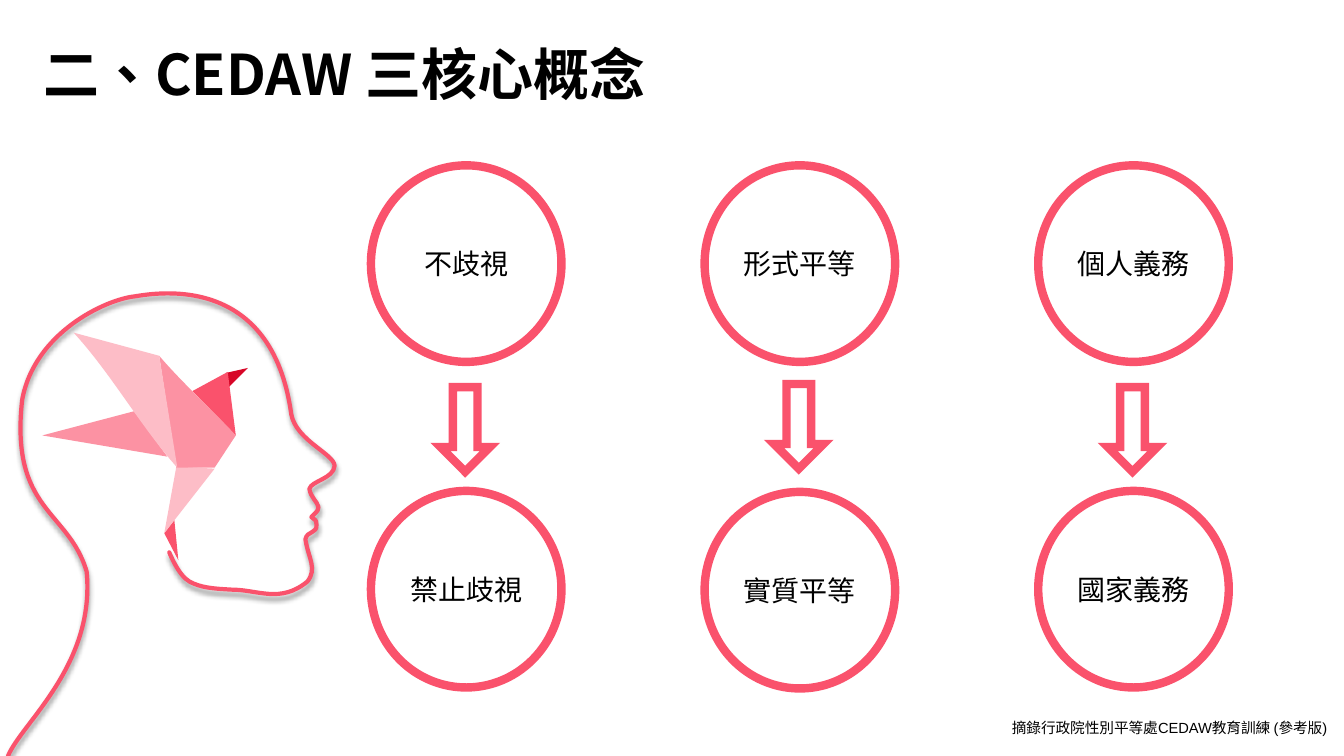
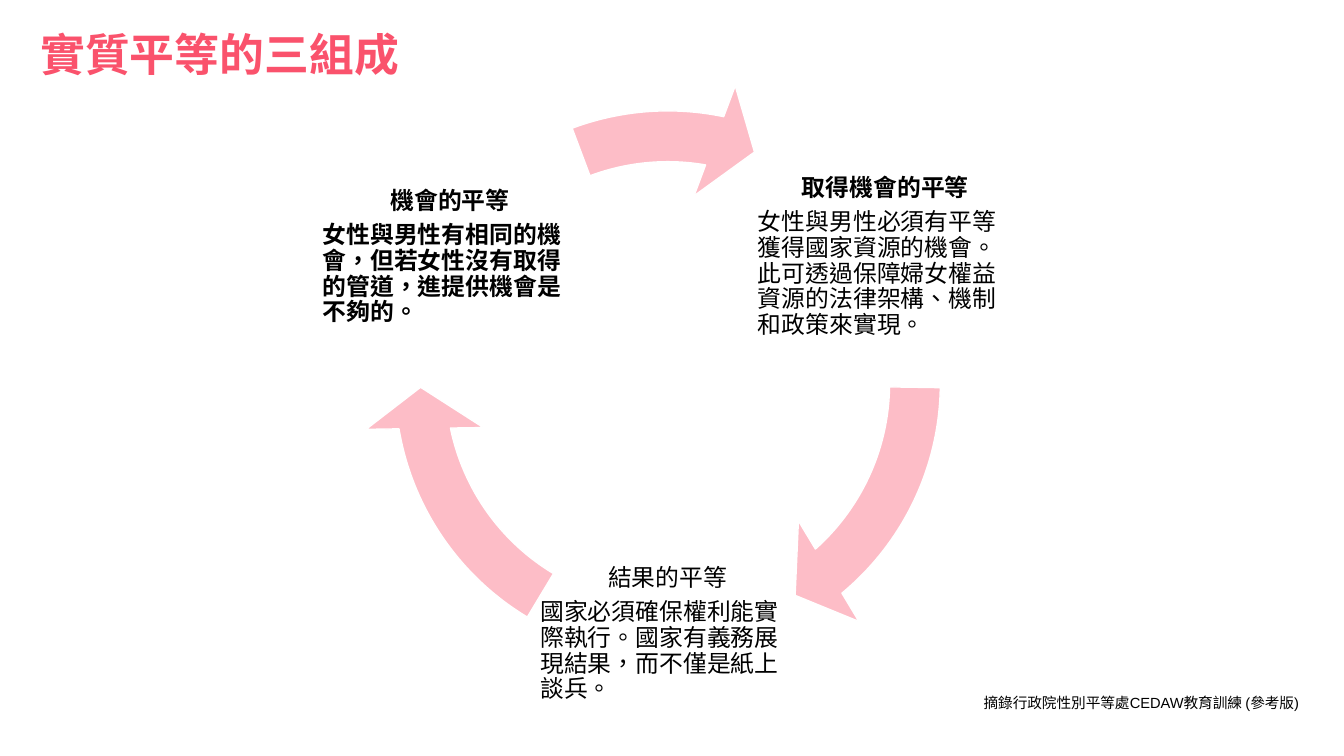
from dataclasses import dataclass

from lxml.etree import SubElement
from pptx import Presentation
from pptx.dml.color import RGBColor
from pptx.enum.shapes import MSO_SHAPE
from pptx.enum.text import MSO_ANCHOR, MSO_AUTO_SIZE, PP_ALIGN
from pptx.oxml.ns import qn
from pptx.util import Inches, Pt


@dataclass(frozen=True)
class Theme:
    ink: str = "000000"
    paper: str = "FFFFFF"
    rose: str = "FA526C"
    blush: str = "FC92A3"
    pale: str = "FDBDC7"
    crimson: str = "D70627"
    sans: str = "Noto Sans CJK SC"
    cycle: str = "Noto Sans CJK JP"
    latin: str = "Arial"
    head: float = 40
    title: float = 32
    label: float = 20
    body: float = 17
    note: float = 10.5


look = Theme()


def write(frame, lines, size, face=look.sans, color=look.ink, inset=0.0, **form):
    """Fill a frame with (text, bold, alignment) lines; form sets paragraph values."""
    layout = {"word_wrap": True, "auto_size": MSO_AUTO_SIZE.NONE,
              "vertical_anchor": MSO_ANCHOR.MIDDLE}
    layout |= {f"margin_{side}": Inches(inset)
               for side in ("left", "top", "right", "bottom")}
    for key, value in layout.items():
        setattr(frame, key, value)
    for i, (text, bold, align) in enumerate(lines):
        para = frame.add_paragraph() if i else frame.paragraphs[0]
        for key, value in {"alignment": align, **form}.items():
            setattr(para, key, value)
        run = para.add_run()
        run.text = text
        for key, value in {"name": face, "size": Pt(size), "bold": bold}.items():
            setattr(run.font, key, value)
        run.font.color.rgb = RGBColor.from_string(color)
        east = look.sans if face == look.latin else face
        props = run._r.get_or_add_rPr()
        props.set("lang", "zh-TW")
        SubElement(props, qn("a:ea"), typeface=east)


def paint(shape, fill=None, line=None, width=1):
    shape.shadow.inherit = False
    if fill:
        shape.fill.solid()
        shape.fill.fore_color.rgb = RGBColor.from_string(fill)
    else:
        shape.fill.background()
    if line:
        shape.line.color.rgb = RGBColor.from_string(line)
        shape.line.width = Pt(width)
    else:
        shape.line.fill.background()


deck = Presentation()
deck.slide_width, deck.slide_height = Inches(40) // 3, Inches(7.5)
left, mid = PP_ALIGN.LEFT, PP_ALIGN.CENTER

# Titles and source notes
pages = [
    ("二、CEDAW 三核心概念", look.head, look.ink, (0.33, 0.2, 6.64, 1.13), (9.94, 7.08)),
    ("實質平等的三組成", look.title, look.rose, (0.3, 0, 3.77, 1.13), (9.66, 6.83)),
]
slides = []
for words, size, color, box, spot in pages:
    slide = deck.slides.add_slide(deck.slide_layouts[5])
    title = slide.shapes.title
    for key, value in zip(("left", "top", "width", "height"), box):
        setattr(title, key, Inches(value))
    write(title.text_frame, [(words, True, left)], size, color=color,
          inset=0.1, line_spacing=0.9)
    note = slide.shapes.add_textbox(*map(Inches, (*spot, 3.39, 0.28))).text_frame
    write(note, [("摘錄行政院性別平等處CEDAW教育訓練 (參考版)", False, left)],
          look.note, look.latin, inset=0.1)
    note.margin_top = note.margin_bottom = Inches(0.05)
    note.vertical_anchor = MSO_ANCHOR.TOP
    slides.append(slide)
core, ring = slides

# Three columns: circle, arrow, circle
pairs = [("不歧視", "禁止歧視"), ("形式平等", "實質平等"), ("個人義務", "國家義務")]
start, step, wide, high = 3.68, 3.31, 1.89, 1.95
for col, pair in enumerate(pairs):
    x = start + col * step
    low, gap = (4.88, 3.81) if col == 1 else (4.87, 3.84)
    for y, words in zip((1.64, low), pair):
        disc = core.shapes.add_shape(
            MSO_SHAPE.OVAL, *map(Inches, (x, y, wide, high)))
        paint(disc, look.paper, look.rose, 6)
        write(disc.text_frame, [(words, False, mid)], look.label)
    arrow = core.shapes.add_shape(
        MSO_SHAPE.DOWN_ARROW, *map(Inches, (x + 0.69, gap, 0.49, 0.84)))
    paint(arrow, look.paper, look.rose, 6)
    SubElement(arrow.line._get_or_add_ln(), qn("a:miter"), lim="800000")

# Outlines: a pair is a corner, six numbers are two curve handles and an end
face = [
    (1.68, 5.48),
    (1.68, 5.48, 1.77, 5.71, 1.88, 5.77), (1.99, 5.83, 2.11, 5.84, 2.3, 5.85),
    (2.56, 5.85, 2.78, 5.99, 3.05, 5.77), (3.15, 5.64, 3.06, 5.54, 3.03, 5.35),
    (3.05, 5.26, 3.15, 5.3, 3.14, 5.2), (3.14, 5.15, 3.12, 5.16, 3.09, 5.13),
    (3.11, 5.1, 3.16, 5.08, 3.16, 5.03), (3.15, 4.98, 3.08, 4.93, 3.07, 4.85),
    (3.09, 4.77, 3.31, 4.75, 3.32, 4.62), (3.31, 4.5, 2.94, 4.37, 2.89, 4.11),
    (2.7, 2.72, 1.58, 2.9, 1.34, 2.94), (1.05, 2.97, 0.34, 3.3, 0.22, 3.97),
    (0.1, 5.07, 0.68, 5.06, 0.86, 5.67), (0.95, 6.6, 0.21, 7.18, 0.08, 7.5),
]
parts = [
    (face, None),
    ([(1.73, 5.16), (1.77, 5.56), (1.63, 5.29)], look.rose),
    ([(1.63, 5.29), (1.75, 4.63), (2.13, 4.65)], look.pale),
    ([(2.24, 3.7), (2.46, 3.65), (2.27, 3.84)], look.crimson),
    ([(1.91, 3.88), (2.26, 3.69), (2.34, 4.32)], look.rose),
    ([(0.42, 4.32), (1.33, 4.08), (1.66, 4.53)], look.blush),
    ([(2.13, 4.64), (2.34, 4.32), (2.09, 4.05, 1.81, 3.8, 1.58, 3.53),
      (1.75, 4.64)], look.blush),
    ([(1.58, 3.53), (0.73, 3.3), (1.1, 3.7, 1.4, 4.24, 1.76, 4.64)], look.pale),
]
for marks, fill in parts:
    first, *ends = [tuple(map(Inches, mark[-2:])) for mark in marks]
    pen = core.shapes.build_freeform(*first, scale=1.0)
    pen.add_line_segments(ends, close=bool(fill))
    shape = pen.convert_to_shape()
    paint(shape, fill, None if fill else look.rose, 3)
    for mark, leg in zip(marks[1:], list(shape._element.iter(qn("a:lnTo")))):
        if len(mark) == 6:
            leg.tag = qn("a:cubicBezTo")
            for i, (x, y) in enumerate((mark[:2], mark[2:4])):
                knot = leg.makeelement(qn("a:pt"), {
                    "x": str(Inches(x) - shape.left), "y": str(Inches(y) - shape.top)})
                leg.insert(i, knot)
    if not fill:
        edge = shape.line._get_or_add_ln()
        edge.set("cap", "rnd")
        SubElement(edge, qn("a:round"))
        glow = SubElement(
            shape._element.spPr.find(qn("a:effectLst")), qn("a:outerShdw"),
            blurRad=str(Pt(4)), dist=str(Pt(3)), dir="5400000", rotWithShape="0")
        tone = SubElement(glow, qn("a:srgbClr"), val=look.ink)
        SubElement(tone, qn("a:alpha"), val="40000")

# Cycle of three parts: place, heading, body, bold flags, arrow end and start
cycle = [
    (7.5, 1.27, "取得機會的平等",
     "女性與男性必須有平等獲得國家資源的機會。此可透過保障婦女權益資源的法律架構、機制和政策來實現。",
     (True, False), (29.63, 0.523)),
    (5.34, 5.01, "結果的平等",
     "國家必須確保權利能實際執行。國家有義務展現結果，而不僅是紙上談兵。",
     (False, False), (101.714, 72.607)),
    (3.18, 1.27, "機會的平等",
     "女性與男性有相同的機會，但若女性沒有取得的管道，進提供機會是不夠的。",
     (True, True), (168.56, 149.677)),
]
for x, y, name, words, bold, span in cycle:
    box = ring.shapes.add_textbox(*map(Inches, (x, y, 2.57, 2.57)))
    write(box.text_frame, [(name, bold[0], mid), (words, bold[1], left)],
          look.body, look.cycle, inset=0.02, line_spacing=0.9, space_after=Pt(6))
    arc = ring.shapes.add_shape(
        MSO_SHAPE.CIRCULAR_ARROW, *map(Inches, (3.59, 0.77, 6.07, 6.07)))
    for i, value in enumerate((0.083, 5.763, *span, 0.096)):
        arc.adjustments[i] = value
    paint(arc, look.pale, look.paper)

deck.save("out.pptx")
